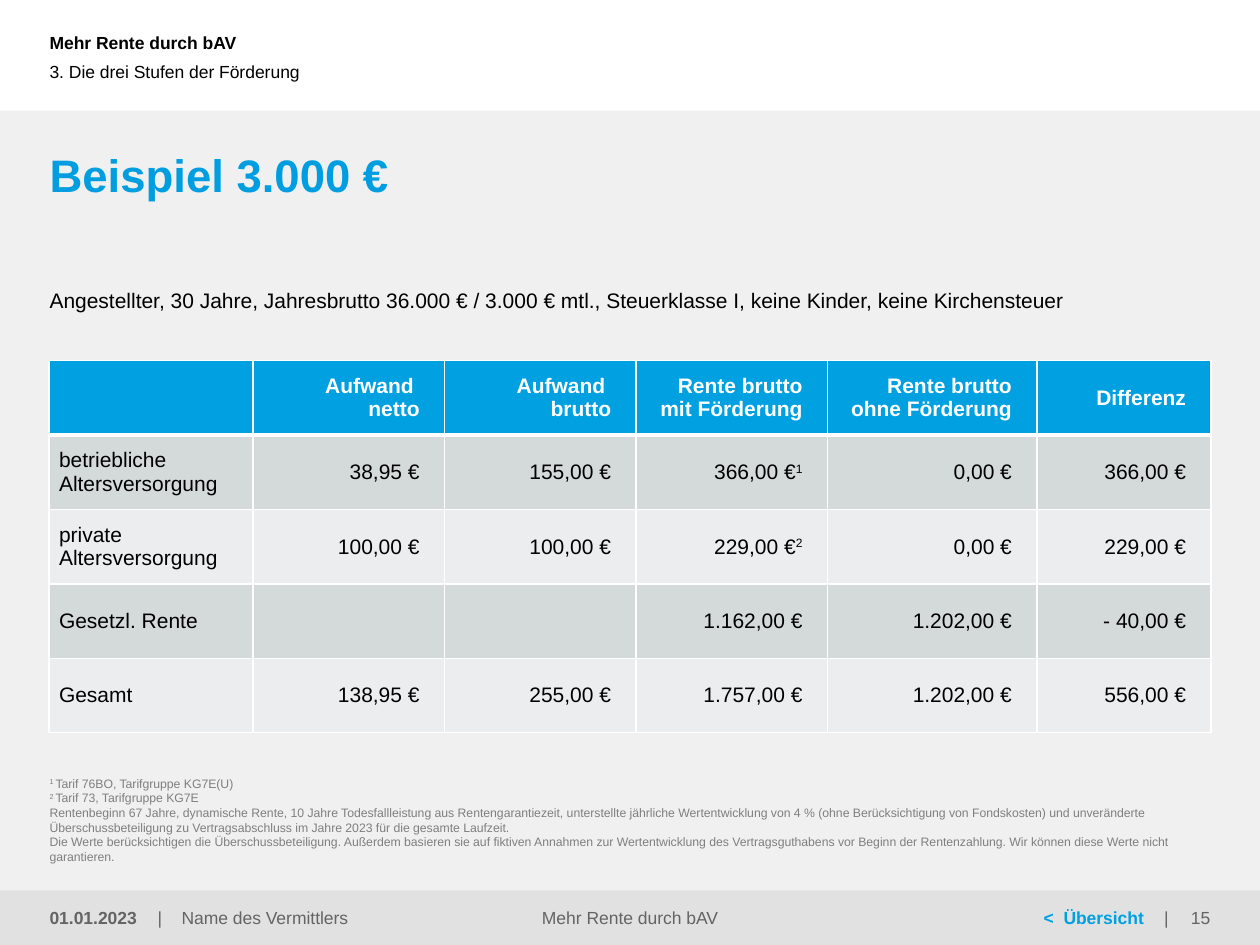
from lxml import etree
from pptx import Presentation
from pptx.dml.color import RGBColor
from pptx.enum.shapes import MSO_SHAPE
from pptx.enum.text import MSO_ANCHOR, MSO_AUTO_SIZE, PP_ALIGN
from pptx.oxml.ns import qn
from pptx.util import Cm, Pt

RECTANGLE = MSO_SHAPE.RECTANGLE
TOP, MIDDLE, BOTTOM = MSO_ANCHOR.TOP, MSO_ANCHOR.MIDDLE, MSO_ANCHOR.BOTTOM
LEFT, CENTER, RIGHT = PP_ALIGN.LEFT, PP_ALIGN.CENTER, PP_ALIGN.RIGHT
NO_FIT = MSO_AUTO_SIZE.NONE

FONT = "Arial"
COLORS = {
    "white": "FFFFFF", "black": "000000", "panel": "F0F0F0", "footer": "E1E1E1",
    "title": "009EE0", "accent": "00A0E1", "muted": "646464", "note": "7F7F7F",
    "dark_row": "D4D9DA", "light_row": "EBEDEE",
}
MARGIN = 1.0
COLUMN_WIDTHS = [4.11, 3.86, 3.86, 3.86, 4.22, 3.51]
TABLE_ROWS = [
    ["", "Aufwand \vnetto", "Aufwand \vbrutto", "Rente brutto mit Förderung",
     "Rente brutto ohne Förderung", "Differenz"],
    ["betriebliche Altersversorgung", "38,95 €", "155,00 €", "366,00 €^1", "0,00 €", "366,00 €"],
    ["private \vAltersversorgung", "100,00 €", "100,00 €", "229,00 €^2", "0,00 €", "229,00 €"],
    ["Gesetzl. Rente", "", "", "1.162,00 €", "1.202,00 €", "- 40,00 €"],
    ["Gesamt", "138,95 €", "255,00 €", "1.757,00 €", "1.202,00 €", "556,00 €"],
]
FOOTNOTES = [
    "^1 ^Tarif 76BO, Tarifgruppe KG7E(U)",
    "^2 ^Tarif 73, Tarifgruppe KG7E",
    "Rentenbeginn 67 Jahre, dynamische Rente, 10 Jahre Todesfallleistung aus "
    "Rentengarantiezeit, unterstellte jährliche Wertentwicklung von 4 % (ohne "
    "Berücksichtigung von Fondskosten) und unveränderte Überschussbeteiligung zu "
    "Vertragsabschluss im Jahre 2023 für die gesamte Laufzeit.\v"
    "Die Werte berücksichtigen die Überschussbeteiligung. Außerdem basieren sie auf "
    "fiktiven Annahmen zur Wertentwicklung des Vertragsguthabens vor Beginn der "
    "Rentenzahlung. Wir können diese Werte nicht garantieren.",
]


def color(name):
    return RGBColor.from_string(COLORS[name])


def style_font(font, size, color_name, bold=False):
    font.name = FONT
    font.size = Pt(size)
    font.bold = bold
    font.color.rgb = color(color_name)


def write_para(para, text, size, color_name, bold=False, align=LEFT):
    for index, piece in enumerate(text.split("^")):
        for line_index, line in enumerate(piece.split("\v")):
            if line_index:
                para.add_line_break()
            if line:
                span = para.add_run()
                span.text = line
                if index % 2:
                    span._r.get_or_add_rPr().set("baseline", "30000")
    para.alignment = align
    style_font(para.font, size, color_name, bold)


def add_tabs(para, *positions):
    tab_list = etree.SubElement(para._p.get_or_add_pPr(), qn("a:tabLst"))
    for position in positions:
        etree.SubElement(tab_list, qn("a:tab"), pos=str(Cm(position)), algn="l")


def set_frame(frame, anchor, left=0, right=0, top=0):
    frame.word_wrap = True
    frame.auto_size = NO_FIT
    frame.vertical_anchor = anchor
    frame.margin_left, frame.margin_right = Cm(left), Cm(right)
    frame.margin_top, frame.margin_bottom = Cm(top), 0


def add_text_frame(page, box, anchor=MIDDLE, left=0, right=0):
    frame = page.shapes.add_textbox(*map(Cm, box)).text_frame
    set_frame(frame, anchor, left, right)
    return frame


def add_panel(page, box, fill):
    panel = page.shapes.add_shape(RECTANGLE, *map(Cm, box))
    panel.shadow.inherit = False
    panel.fill.solid()
    panel.fill.fore_color.rgb = color(fill)
    panel.line.fill.background()


def add_header(page, box):
    left, top, width, height = box
    chapter = add_text_frame(page, (left, top, 17.73, 1.7), left=MARGIN)
    write_para(chapter.paragraphs[0], "Mehr Rente durch bAV", 10, "black", True)
    section = add_text_frame(page, (left, top + 0.65, 18.16, height - 0.67), left=MARGIN)
    write_para(section.paragraphs[0], "3. Die drei Stufen der Förderung", 10, "black")


def add_intro(page, box):
    left, top, width, height = box
    title = page.shapes.title
    page.shapes._spTree.append(title._element)
    title.left, title.top, title.width, title.height = map(Cm, (left, top, width, 1.4))
    set_frame(title.text_frame, TOP, top=0.07)
    write_para(title.text_frame.paragraphs[0], "Beispiel 3.000 €", 26, "title", True)
    profile = add_text_frame(page, (left, top + 2.89, width, height - 2.89), TOP)
    write_para(profile.paragraphs[0],
               "Angestellter, 30 Jahre, Jahresbrutto 36.000 € / 3.000 € mtl., "
               "Steuerklasse I, keine Kinder, keine Kirchensteuer", 12, "black")


def set_borders(cell, widths):
    properties = cell._tc.get_or_add_tcPr()
    for side, width in widths.items():
        line = etree.SubElement(properties, qn("a:ln" + side), w=str(Pt(width)))
        fill = etree.SubElement(line, qn("a:solidFill"))
        etree.SubElement(fill, qn("a:srgbClr"), val=COLORS["white"])


def add_pension_table(page, box):
    row_count = len(TABLE_ROWS)
    table = page.shapes.add_table(row_count, len(COLUMN_WIDTHS), *map(Cm, box)).table
    for column, width in zip(table.columns, COLUMN_WIDTHS):
        column.width = Cm(width)
    for row_index, texts in enumerate(TABLE_ROWS):
        table.rows[row_index].height = Cm(box[3] / row_count)
        header = row_index == 0
        fill = "accent" if header else "dark_row" if row_index % 2 else "light_row"
        for column_index, text in enumerate(texts):
            cell = table.cell(row_index, column_index)
            set_borders(cell, {"L": 1, "R": 1, "T": 3 if row_index == 1 else 1,
                               "B": 3 if header else 1})
            cell.fill.solid()
            cell.fill.fore_color.rgb = color(fill)
            cell.vertical_anchor = MIDDLE
            cell.margin_left = cell.margin_top = cell.margin_bottom = Cm(0.2)
            cell.margin_right = Cm(0.5 if column_index else 0.2)
            write_para(cell.text_frame.paragraphs[0], text, 12,
                       "white" if header else "black", header,
                       RIGHT if column_index else LEFT)


def add_footnotes(page, box):
    frame = add_text_frame(page, box, BOTTOM)
    for index, text in enumerate(FOOTNOTES):
        para = frame.add_paragraph() if index else frame.paragraphs[0]
        write_para(para, text, 7, "note")


def add_footer(page, box):
    left, top, width, height = box
    add_panel(page, box, "footer")

    date = add_text_frame(page, (left, top, 3.1, height), left=MARGIN)
    write_para(date.paragraphs[0], "01.01.2023", 10, "muted", True)

    agent = add_text_frame(page, (left + 3.18, top, 6.15, height)).paragraphs[0]
    add_tabs(agent, 0.48)
    write_para(agent, "|\tName des Vermittlers", 10, "muted")

    topic = add_text_frame(page, (left + 7.45, top, 10.5, height))
    write_para(topic.paragraphs[0], "Mehr Rente durch bAV", 10, "muted", align=CENTER)

    overview = add_text_frame(page, (left + 17.47, top, 6.15, height), left=3.57).paragraphs[0]
    add_tabs(overview, 0.4, 2.43)
    for text, color_name, bold in (("<\tÜbersicht", "accent", True), ("\t|", "muted", False)):
        span = overview.add_run()
        span.text = text
        style_font(span.font, 10, color_name, bold)

    number = add_text_frame(page, (left + 23, top, width - 23, height), right=MARGIN)
    write_para(number.paragraphs[0], "15", 10, "muted", align=RIGHT)


def main():
    deck = Presentation()
    deck.slide_width, deck.slide_height = Cm(25.4), Cm(19.05)
    page = deck.slides.add_slide(deck.slide_layouts[5])
    add_panel(page, (0, 2.23, 25.4, 16.82), "panel")
    add_header(page, (0, 0, 25.4, 2.26))
    add_intro(page, (MARGIN, 2.9, 23.42, 3.63))
    add_pension_table(page, (0.99, 7.27, 23.42, 7.5))
    add_footnotes(page, (MARGIN, 17.12, 23.4, 0.3))
    add_footer(page, (0, 17.95, 25.4, 1.1))
    deck.save("out.pptx")


if __name__ == "__main__":
    main()
